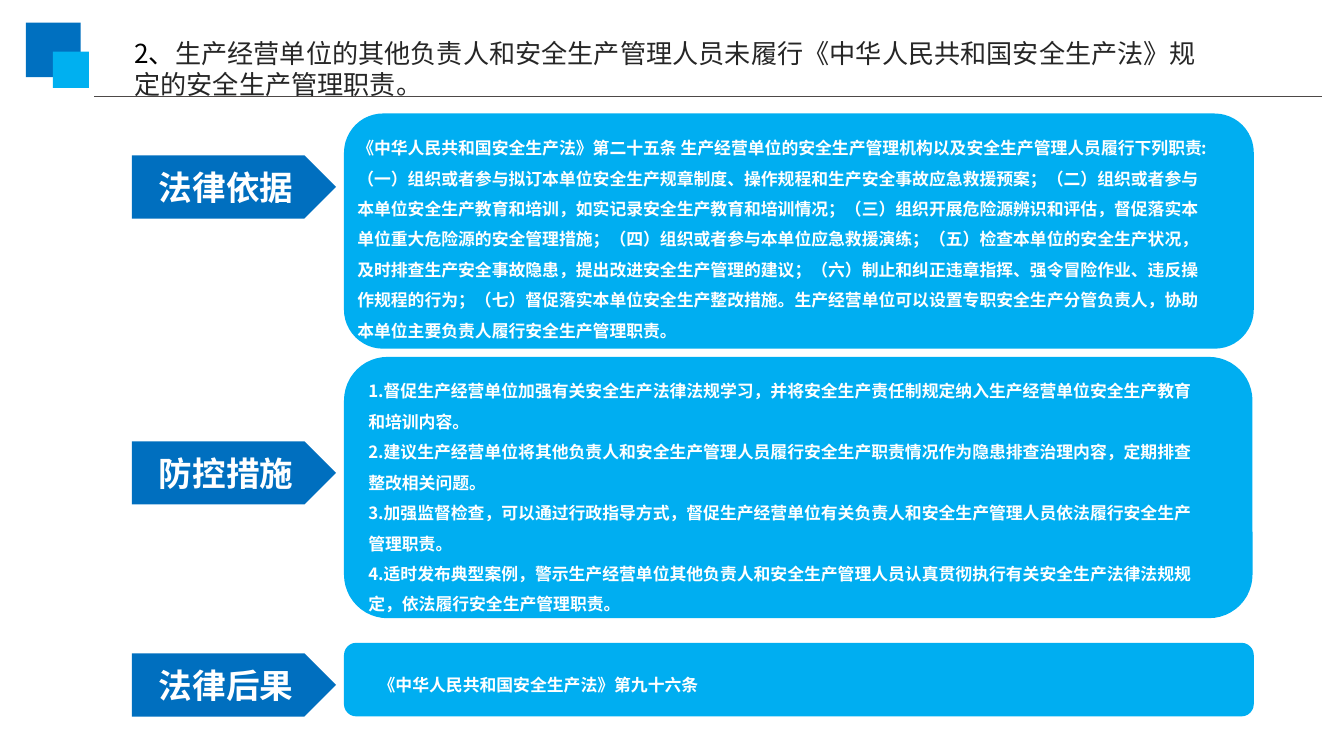
from lxml.etree import SubElement
from pptx import Presentation
from pptx.dml.color import RGBColor
from pptx.enum.shapes import MSO_CONNECTOR, MSO_SHAPE
from pptx.enum.text import MSO_ANCHOR, MSO_AUTO_SIZE, PP_ALIGN
from pptx.oxml.ns import qn
from pptx.util import Pt

HUES = {
    "deep": "0070C0", "light": "00B0F0", "tag": "006FBF", "panel": "00AEF1",
    "rule": "4D4948", "black": "000000", "ink": "262626", "white": "FFFFFF",
}
SANS = "Noto Sans CJK SC"

LAW = (
    "《中华人民共和国安全生产法》第二十五条 生产经营单位的安全生产管理机构以及安全生产管理人员履行下列职责:"
    "（一）组织或者参与拟订本单位安全生产规章制度、操作规程和生产安全事故应急救援预案；"
    "（二）组织或者参与本单位安全生产教育和培训，如实记录安全生产教育和培训情况；"
    "（三）组织开展危险源辨识和评估，督促落实本单位重大危险源的安全管理措施；"
    "（四）组织或者参与本单位应急救援演练；"
    "（五）检查本单位的安全生产状况，及时排查生产安全事故隐患，提出改进安全生产管理的建议；"
    "（六）制止和纠正违章指挥、强令冒险作业、违反操作规程的行为；"
    "（七）督促落实本单位安全生产整改措施。"
    "生产经营单位可以设置专职安全生产分管负责人，协助本单位主要负责人履行安全生产管理职责。"
)
STEPS = [
    "1.督促生产经营单位加强有关安全生产法律法规学习，并将安全生产责任制规定纳入生产经营单位安全生产教育和培训内容。",
    "2.建议生产经营单位将其他负责人和安全生产管理人员履行安全生产职责情况作为隐患排查治理内容，定期排查整改相关问题。",
    "3.加强监督检查，可以通过行政指导方式，督促生产经营单位有关负责人和安全生产管理人员依法履行安全生产管理职责。",
    "4.适时发布典型案例，警示生产经营单位其他负责人和安全生产管理人员认真贯彻执行有关安全生产法律法规规定，依法履行安全生产管理职责。",
]


def hue(name):
    return RGBColor.from_string(HUES[name])


def write(para, text, size=9, color="white", bold=True, font=SANS,
          align=PP_ALIGN.LEFT, line=None):
    """Add one formatted run to a paragraph."""
    para.alignment = align
    para.space_before = Pt(0)
    if line:
        para.line_spacing = Pt(line)
    run = para.add_run()
    run.text = text
    face = run.font
    face.size, face.bold, face.name = Pt(size), bold, font
    face.color.rgb = hue(color)
    if font == SANS:
        SubElement(run.font._element, qn("a:ea"), typeface=font)


class Deck:
    """Page style and the current slide."""

    def __init__(self, wide, high):
        self.prs = Presentation()
        self.prs.slide_width, self.prs.slide_height = Pt(wide), Pt(high)
        self.slide = self.prs.slides.add_slide(self.prs.slide_layouts[1])
        self.shapes = self.slide.shapes

    def place(self, item, box):
        item.left, item.top, item.width, item.height = map(Pt, box)

    def frame(self, item, pad=(7.2, 3.6), anchor=MSO_ANCHOR.TOP):
        tf = item.text_frame
        tf.word_wrap, tf.auto_size = True, MSO_AUTO_SIZE.NONE
        tf.vertical_anchor = anchor
        tf.margin_left = tf.margin_right = Pt(pad[0])
        tf.margin_top = tf.margin_bottom = Pt(pad[1])
        return tf

    def shape(self, kind, box, fill):
        item = self.shapes.add_shape(kind, *map(Pt, box))
        item.shadow.inherit = False
        item.fill.solid()
        item.fill.fore_color.rgb = hue(fill)
        item.line.fill.background()
        return item

    def rule(self, left, right, top):
        item = self.shapes.add_connector(
            MSO_CONNECTOR.STRAIGHT, Pt(left), Pt(top), Pt(right), Pt(top))
        item.line.color.rgb, item.line.width = hue("rule"), Pt(0.75)
        SubElement(item._element.spPr, qn("a:effectLst"))

    def title(self, num, text, box):
        item = self.shapes.title
        self.place(item, box)
        para = self.frame(item).paragraphs[0]
        style = dict(size=14, bold=False, line=16.7)
        write(para, num, color="black", **style)
        write(para, text, color="ink", **style)

    def tag(self, text, top):
        item = self.shape(MSO_SHAPE.PENTAGON, (70.6, top, 109.4, 33.8), "tag")
        tf = self.frame(item, (5, 2.9), MSO_ANCHOR.MIDDLE)
        write(tf.paragraphs[0], text, size=18, font="Arial", align=PP_ALIGN.CENTER)

    def note(self, text, box):
        item = self.shapes.add_textbox(*map(Pt, box))
        write(self.frame(item).paragraphs[0], text, line=16.3)

    def list(self, rows, box):
        item = self.shapes.placeholders[1]
        self.place(item, box)
        # Bring the list in front of its panel
        item.element.getparent().append(item.element)
        tf = self.frame(item)
        for i, row in enumerate(rows):
            para = tf.add_paragraph() if i else tf.paragraphs[0]
            props = para._p.get_or_add_pPr()
            props.set("marL", "0")
            props.set("indent", "0")
            SubElement(props, qn("a:buNone"))
            write(para, row, line=16.3)


def main():
    deck = Deck(720, 405)

    # Header
    deck.shape(MSO_SHAPE.RECTANGLE, (13.9, 12.1, 29.3, 29.3), "deep")
    deck.shape(MSO_SHAPE.RECTANGLE, (28.3, 27.7, 19.4, 19.4), "light")
    deck.rule(50.4, 708, 51.6)
    deck.title("2、", "生产经营单位的其他负责人和安全生产管理人员未履行"
               "《中华人民共和国安全生产法》规定的安全生产管理职责。",
               (64.8, 16.4, 590.4, 57.6))

    # Panels with their text
    panel = MSO_SHAPE.ROUNDED_RECTANGLE
    deck.shape(panel, (184.3, 60.8, 487.4, 126), "panel")
    deck.note(LAW, (184.3, 64.8, 467.3, 121.7))
    deck.shape(panel, (184.3, 191.2, 486.7, 140), "panel")
    deck.list(STEPS, (190.1, 195.1, 463, 138.2))
    deck.shape(panel, (184.3, 344.4, 487.4, 39.4), "panel")
    deck.note("《中华人民共和国安全生产法》第九十六条", (195.8, 352.4, 414, 23.8))

    # Arrow labels
    for text, top in (("法律依据", 83.3), ("防控措施", 236.5), ("法律后果", 350.1)):
        deck.tag(text, top)

    deck.prs.save("out.pptx")


if __name__ == "__main__":
    main()
